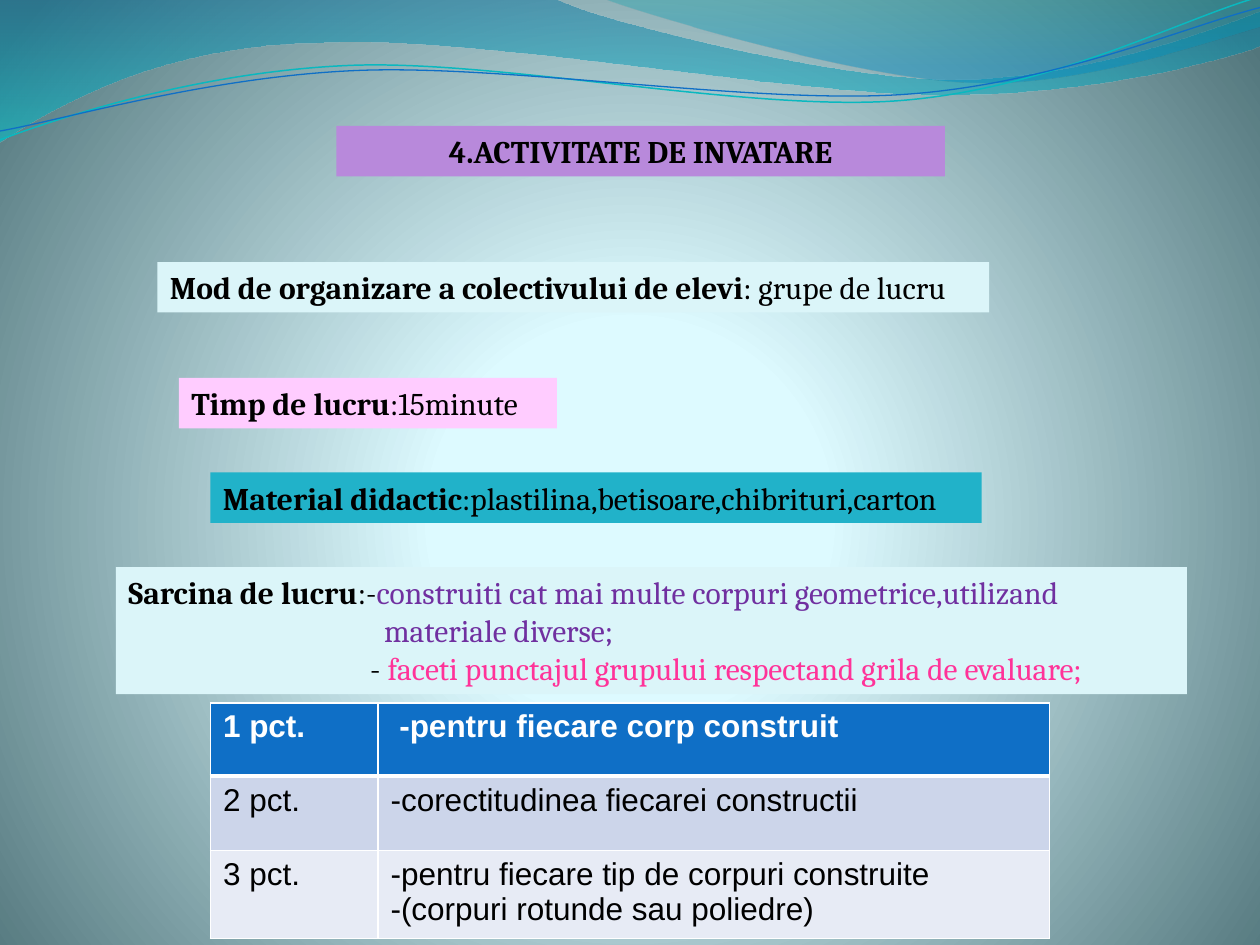
"""Build the learning activity slide with its waves, notes and scoring table."""
from pptx import Presentation
from pptx.dml.color import RGBColor
from pptx.enum.text import MSO_ANCHOR, MSO_AUTO_SIZE, PP_ALIGN
from pptx.oxml import parse_xml
from pptx.util import Inches, Pt

NS = ('xmlns:a="http://schemas.openxmlformats.org/drawingml/2006/main" '
      'xmlns:p="http://schemas.openxmlformats.org/presentationml/2006/main"')
BLACK, WHITE = "000000", "FFFFFF"
BACKGROUND = [(0, "DEFBFF", 100), (25, "DDFAFF", 100), (100, "52767C", 100)]

WAVES = [
    {"start": (0, -0.01), "steps": [
        [(4.4, -0.01)],
        [(4.76, 0.17), (6.64, 0.63), (7.58, 0.63)],
        [(8.53, 0.63), (9.58, 0.26), (10, 0.09)],
        [(10.01, 0.36)],
        [(9.83, 0.44), (8.7, 0.76), (7.46, 0.75)],
        [(6.22, 0.75), (3.82, 0.28), (2.57, 0.34)],
        [(1.29, 0.35), (0.46, 0.83), (-0.01, 1.13)],
        [(0, -0.01)]],
     "stops": [(0, "0074A1", 45), (100, "00C6CF", 55)]},
    {"start": (4.79, -0.01), "steps": [
        [(5.09, 0.11), (6.82, 0.62), (7.69, 0.65)],
        [(8.56, 0.69), (9.61, 0.32), (10, 0.21)],
        [(10, 0)],
        [(4.79, -0.01)]],
     "stops": [(0, "00A1A9", 30), (80, "008BBF", 45)]},
    {"start": (0, 1.11), "steps": [
        [(0.48, 0.93), (1.58, 0.57), (2.77, 0.52)],
        [(3.95, 0.47), (5.93, 0.89), (7.13, 0.8)],
        [(8.33, 0.71), (9.38, 0.15), (9.98, -0.02)]],
     "line": ("0AB8BF", 0.85)},
    {"start": (0, 1.04), "steps": [
        [(0.47, 0.96), (1.64, 0.61), (2.83, 0.56)],
        [(4.03, 0.51), (5.97, 0.83), (7.17, 0.75)],
        [(8.36, 0.67), (9.41, 0.21), (10, 0.06)]],
     "line": ("0F6FC6", 0.75)},
]

TITLE = ((2.67, 1, 4.83, 0.4), "B889DB", "4.ACTIVITATE DE INVATARE")
NOTES = [
    ((1.25, 2.08, 6.6, 0.4), "DBF5F9",
     "Mod de organizare a colectivului de elevi", ": grupe de lucru"),
    ((1.42, 3, 3, 0.4), "FFCCFF", "Timp de lucru", ":15minute"),
    ((1.67, 3.75, 6.12, 0.4), "21B2C9",
     "Material didactic", ":plastilina,betisoare,chibrituri,carton"),
]
TASK = ((0.92, 4.5, 8.5, 1.01), "DBF5F9", "Sarcina de lucru", ":-")
TASK_LINES = [
    (0, "", "construiti cat mai multe corpuri geometrice,utilizand", "7030A0"),
    (2.03, "", "materiale diverse;", "7030A0"),
    (1.92, "- ", "faceti punctajul grupului respectand grila de evaluare;", "FF3399"),
]

TABLE_AT = (1.67, 5.58, 6.66, 1.87)
COLUMNS, ROWS = (1.33, 5.33), (0.58, 0.59, 0.7)
ROW_FILLS = ("0F6FC6", "CCD5EA", "E7EBF5")
SCORES = [
    ("1 pct.", [" -pentru fiecare corp construit"]),
    ("2 pct.", ["-corectitudinea fiecarei constructii"]),
    ("3 pct.", ["pentru fiecare tip de corpuri construite",
                "(corpuri rotunde sau poliedre)"]),
]


def color(value):
    return RGBColor.from_string(value)


def gradient(stops, shade):
    marks = "".join(
        f'<a:gs pos="{at * 1000}"><a:srgbClr val="{tint}">'
        f'<a:alpha val="{alpha * 1000}"/></a:srgbClr></a:gs>'
        for at, tint, alpha in stops)
    return f'<a:gradFill {NS} rotWithShape="1"><a:gsLst>{marks}</a:gsLst>{shade}</a:gradFill>'


def paint_background(page):
    shade = ('<a:path path="circle"><a:fillToRect l="10000" t="110000" '
             'r="10000" b="100000"/></a:path>')
    page.element.cSld.insert(0, parse_xml(
        f'<p:bg {NS}><p:bgPr>{gradient(BACKGROUND, shade)}<a:effectLst/></p:bgPr></p:bg>'))


def bend_segments(wave, steps):
    segments = list(wave._element.iter("{*}lnTo"))
    for segment, step in zip(segments, steps):
        if len(step) == 3:
            marks = "".join(f'<a:pt x="{Inches(x) - wave.left}" y="{Inches(y) - wave.top}"/>'
                            for x, y in step)
            segment.getparent().replace(segment, parse_xml(
                f'<a:cubicBezTo {NS}>{marks}</a:cubicBezTo>'))


def add_wave(page, start, steps, stops=None, line=None):
    builder = page.shapes.build_freeform(*map(Inches, start))
    ends = [tuple(map(Inches, step[-1])) for step in steps]
    builder.add_line_segments(ends, close=stops is not None)
    wave = builder.convert_to_shape()
    bend_segments(wave, steps)
    wave.shadow.inherit = False
    wave.fill.background()
    if stops:
        wave.line.fill.background()
        flat = wave._element.spPr.find("{*}noFill")
        flat.getparent().replace(flat, parse_xml(gradient(stops, '<a:lin ang="5400000"/>')))
    else:
        tint, width = line
        wave.line.color.rgb = color(tint)
        wave.line.width = Pt(width)


def add_span(para, text, tint=BLACK, bold=False, font="Cambria"):
    span = para.add_run()
    span.text = text
    span.font.size, span.font.name, span.font.bold = Pt(18), font, bold
    span.font.color.rgb = color(tint)


def add_box(page, at, fill, label, rest="", align=PP_ALIGN.LEFT):
    box = page.shapes.add_textbox(*map(Inches, at))
    box.fill.solid()
    box.fill.fore_color.rgb = color(fill)
    frame = box.text_frame
    frame.word_wrap, frame.vertical_anchor = True, MSO_ANCHOR.TOP
    frame.auto_size = MSO_AUTO_SIZE.SHAPE_TO_FIT_TEXT
    para = frame.paragraphs[0]
    para.alignment = align
    add_span(para, label, bold=True)
    if rest:
        add_span(para, rest)
    return frame


def add_task(page):
    frame = add_box(page, *TASK)
    for i, (indent, dash, text, tint) in enumerate(TASK_LINES):
        para = frame.add_paragraph() if i else frame.paragraphs[0]
        para._p.get_or_add_pPr().set("marL", str(Inches(indent)))
        if dash:
            add_span(para, dash)
        add_span(para, text, tint)


def add_dash(para):
    style = para._p.get_or_add_pPr()
    style.append(parse_xml(f'<a:buFont {NS} typeface="Arial"/>'))
    style.append(parse_xml(f'<a:buChar {NS} char="-"/>'))


def fill_cell(cell, lines, row):
    cell.fill.solid()
    cell.fill.fore_color.rgb = color(ROW_FILLS[row])
    widths = {"L": 1, "R": 1, "T": 3 if row == 1 else 1, "B": 3 if row == 0 else 1}
    for i, (side, width) in enumerate(widths.items()):
        cell._tc.get_or_add_tcPr().insert(i, parse_xml(
            f'<a:ln{side} {NS} w="{Pt(width)}"><a:solidFill>'
            f'<a:srgbClr val="{WHITE}"/></a:solidFill></a:ln{side}>'))
    for i, text in enumerate(lines):
        para = cell.text_frame.add_paragraph() if i else cell.text_frame.paragraphs[0]
        if len(lines) > 1:
            add_dash(para)
        add_span(para, text, BLACK if row else WHITE, bold=row == 0, font="Arial")


def add_scores(page):
    table = page.shapes.add_table(len(ROWS), len(COLUMNS), *map(Inches, TABLE_AT)).table
    for column, width in zip(table.columns, COLUMNS):
        column.width = Inches(width)
    for i, (height, (points, reasons)) in enumerate(zip(ROWS, SCORES)):
        table.rows[i].height = Inches(height)
        fill_cell(table.cell(i, 0), [points], i)
        fill_cell(table.cell(i, 1), reasons, i)


def main():
    deck = Presentation()
    deck.slide_width, deck.slide_height = Inches(10), Inches(7.5)
    page = deck.slides.add_slide(deck.slide_layouts[6])
    paint_background(page)
    for wave in WAVES:
        add_wave(page, **wave)
    add_box(page, *TITLE, align=PP_ALIGN.CENTER)
    for note in NOTES:
        add_box(page, *note)
    add_task(page)
    add_scores(page)
    deck.save("out.pptx")


if __name__ == "__main__":
    main()
